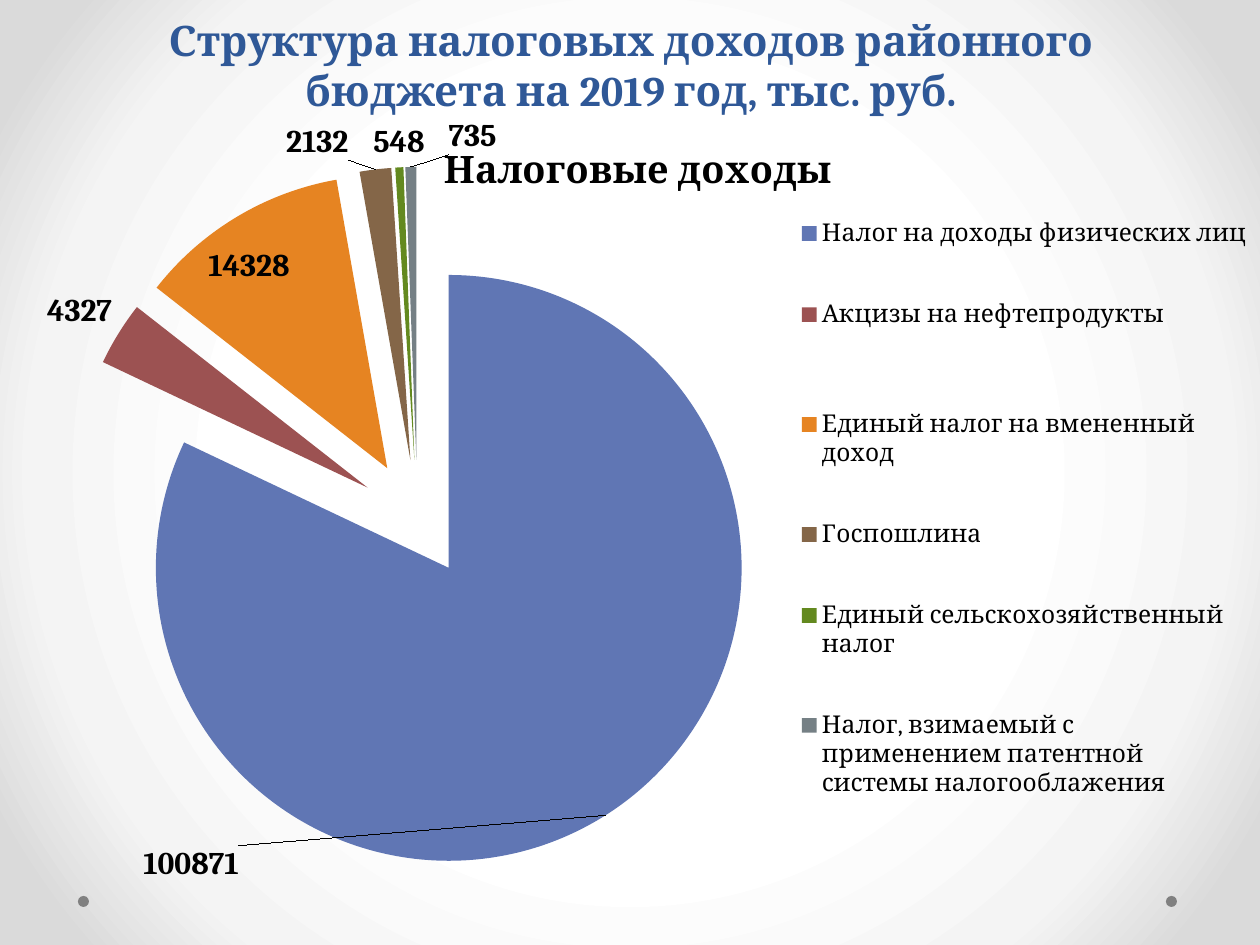
from dataclasses import dataclass

from lxml.etree import SubElement as Sub
from pptx import Presentation
from pptx.chart.data import CategoryChartData as ChartData
from pptx.dml.color import RGBColor as RGB
from pptx.enum.chart import XL_CHART_TYPE as ChartType
from pptx.enum.chart import XL_LABEL_POSITION as LabelPos
from pptx.enum.chart import XL_LEGEND_POSITION as LegendPos
from pptx.enum.shapes import MSO_SHAPE as Preset
from pptx.enum.text import MSO_ANCHOR as Anchor
from pptx.enum.text import PP_ALIGN as Align
from pptx.oxml import parse_xml
from pptx.oxml.ns import nsdecls, qn
from pptx.util import Emu, Pt


@dataclass(frozen=True)
class Theme:
    face: str = "Cambria"
    heading: str = "2F5897"
    ink: str = "000000"
    dot: str = "808080"
    backdrop: tuple = ((50, "FFFFFF"), (76, "F4F4F4"), (92, "DADADA"))
    heading_size: float = 24
    chart_title_size: float = 21.6
    label_size: float = 18
    legend_size: float = 14


THEME = Theme()
PX = 9144000 / 1260

TAXES = [
    ("Налог на доходы физических лиц", 100871, "6076B4", LabelPos.OUTSIDE_END, (-466, 24)),
    ("Акцизы на нефтепродукты\n", 4327, "9C5252", LabelPos.OUTSIDE_END, None),
    ("Единый налог на вмененный доход", 14328, "E68422", LabelPos.INSIDE_END, (-32, 24)),
    ("Госпошлина", 2132, "846648", LabelPos.OUTSIDE_END, (-26, -2)),
    ("Единый сельскохозяйственный налог", 548, "63891F", LabelPos.OUTSIDE_END, None),
    ("Налог, взимаемый с применением патентной системы налогооблажения", 735,
     "758085", LabelPos.OUTSIDE_END, (62, -5)),
]


def px(*lengths):
    return [Emu(round(length * PX)) for length in lengths]


def assign(target, values):
    for name, value in values.items():
        setattr(target, name, value)


def style_font(font, size, color=THEME.ink, bold=False):
    assign(font, {"name": THEME.face, "size": Pt(size), "bold": bold})
    font.color.rgb = RGB.from_string(color)


def set_layout(part, after, area, box, **modes):
    for stale in part.findall(qn("c:layout")):
        part.remove(stale)
    layout = parse_xml(f"<c:layout {nsdecls('c')}/>")
    manual = Sub(layout, qn("c:manualLayout"))
    shares = {name: length / whole for name, length, whole in zip("xywh", box, area * 2)}
    for name, value in {**modes, **shares}.items():
        Sub(manual, qn(f"c:{name}")).set("val", str(value))
    if after:
        part.find(qn(after)).addnext(layout)
    else:
        part.insert(0, layout)


def paint_backdrop(slide):
    fill = slide.background.fill
    fill.gradient()
    stops = "".join(
        f'<a:gs pos="{share * 1000}"><a:srgbClr val="{color}"/></a:gs>'
        for share, color in THEME.backdrop
    )
    gradient = parse_xml(
        f'<a:gradFill {nsdecls("a")} rotWithShape="1"><a:gsLst>{stops}</a:gsLst>'
        '<a:path path="circle"><a:fillToRect l="50000" t="50000" r="50000" b="50000"/>'
        "</a:path></a:gradFill>"
    )
    current = next(slide.background._cSld.iter(qn("a:gradFill")))
    current.getparent().replace(current, gradient)


def add_corner_dots(slide, left, top, width, size):
    for x in (left, left + width - size):
        dot = slide.shapes.add_shape(Preset.OVAL, *px(x, top, size, size))
        dot.shadow.inherit = False
        dot.fill.solid()
        dot.fill.fore_color.rgb = RGB.from_string(THEME.dot)
        dot.line.fill.background()


def add_heading(slide, left, top, width, height):
    frame = slide.shapes.add_textbox(*px(left, top, width, height)).text_frame
    assign(frame, {"word_wrap": True, "vertical_anchor": Anchor.BOTTOM})
    paragraph = frame.paragraphs[0]
    paragraph.alignment = Align.CENTER
    run = paragraph.add_run()
    run.text = "Структура налоговых доходов районного бюджета на 2019 год, тыс. руб."
    style_font(run.font, THEME.heading_size, THEME.heading, True)


def style_slices(series, area):
    explosion = parse_xml(f'<c:explosion {nsdecls("c")} val="20"/>')
    series._element.find(qn("c:tx")).addnext(explosion)
    labels = series.data_labels
    labels.show_value = True
    style_font(labels.font, THEME.label_size, bold=True)
    for index, (_, _, color, position, _) in enumerate(TAXES):
        point = series.points[index]
        point.format.fill.solid()
        point.format.fill.fore_color.rgb = RGB.from_string(color)
        style_font(point.data_label.font, THEME.label_size, bold=True)
        point.data_label.position = position
    for label, tax in zip(series._element.iter(qn("c:dLbl")), TAXES):
        if tax[-1]:
            set_layout(label, "c:idx", area, tax[-1])


def add_tax_pie(slide, left, top, width, height):
    area = (width, height)
    edges = {"xMode": "edge", "yMode": "edge"}
    data = ChartData()
    data.categories = [tax[0] for tax in TAXES]
    data.add_series("Налоговые доходы", [tax[1] for tax in TAXES])
    chart = slide.shapes.add_chart(ChartType.PIE, *px(left, top, width, height), data).chart
    style_font(chart.font, THEME.label_size)
    chart._chartSpace.find(qn("c:chart")).addnext(parse_xml(
        f'<c:spPr {nsdecls("c", "a")}><a:noFill/><a:ln><a:noFill/></a:ln></c:spPr>'
    ))

    title = chart.chart_title
    title.text_frame.text = "Налоговые доходы"
    style_font(title.text_frame.paragraphs[0].runs[0].font, THEME.chart_title_size, bold=True)
    set_layout(title._element, "c:tx", area, (422, 22), **edges)

    chart.has_legend = True
    assign(chart.legend, {"position": LegendPos.TOP, "include_in_layout": True})
    style_font(chart.legend.font, THEME.legend_size)
    set_layout(chart.legend._element, "c:legendPos", area, (791, 51, 454, 683), **edges)

    plot = chart.plots[0]
    plot.vary_by_categories = True
    set_layout(chart._chartSpace.chart.plotArea, None, area, (4, 51, 797, 703),
               layoutTarget="inner", **edges)
    style_slices(plot.series[0], area)


def main():
    deck = Presentation()
    assign(deck, dict(zip(("slide_width", "slide_height"), px(1260, 945))))
    slide = deck.slides.add_slide(deck.slide_layouts[6])
    paint_backdrop(slide)
    add_corner_dots(slide, 78, 896, 1099, 11)
    add_tax_pie(slide, 15, 116, 1245, 794)
    add_heading(slide, 64, 25, 1134, 96)
    deck.save("out.pptx")


if __name__ == "__main__":
    main()
